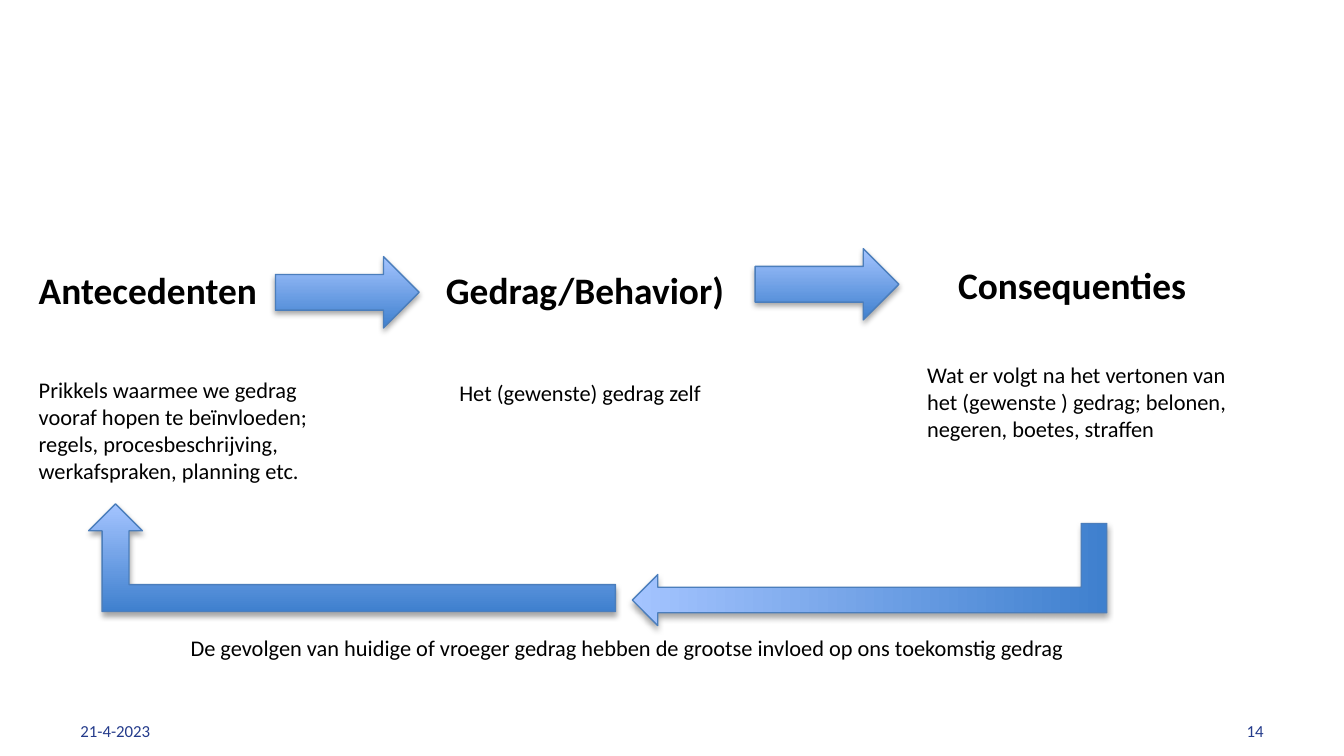
from lxml import etree
from pptx import Presentation
from pptx.dml.color import RGBColor
from pptx.enum import shapes, text
from pptx.oxml import ns
from pptx.util import Pt

HEADING = dict(size=Pt(20), bold=True)
BODY = dict(size=Pt(12))
FOOTER = dict(size=Pt(9))
BLACK, NAVY = "000000", "243B8B"
GRADIENT, OUTLINE = ("3F80CE", "A4C4FF"), "4B7EBC"

TEXTS = [
    ("Antecedenten", (13.7, 139.7, 163.4, 31.7), HEADING),
    ("Gedrag/Behavior)", (231.8, 139.7, 167, 31.7), HEADING),
    ("Consequenties", (506.2, 136.8, 141.8, 31.7), HEADING),
    ("Prikkels waarmee we gedrag vooraf hopen te beïnvloeden; regels, "
     "procesbeschrijving, werkafspraken, planning etc.",
     (13.7, 198, 175.7, 65.5), BODY),
    ("Het (gewenste) gedrag zelf", (239, 199.4, 162, 21.6), BODY),
    ("Wat er volgt na het vertonen van het (gewenste ) gedrag; belonen, "
     "negeren, boetes, straffen", (489.6, 190.1, 175.7, 51.1), BODY),
    ("De gevolgen van huidige of vroeger gedrag hebben de grootse invloed "
     "op ons toekomstig gedrag", (95, 336.2, 488.2, 21.6), BODY),
]
FOOTERS = [
    ("14", (516.2, 375.1, 167.8, 21.6), text.PP_ALIGN.RIGHT, 3.6),
    ("21-4-2023", (36, 375.1, 167.8, 21.6), text.PP_ALIGN.LEFT, 0),
]
KIND = shapes.MSO_SHAPE
ARROWS = [
    (KIND.RIGHT_ARROW, (147.6, 137.5, 77, 38.2), 0, False),
    (KIND.RIGHT_ARROW, (404.6, 133.2, 77, 38.2), 0, False),
    (KIND.BENT_UP_ARROW, (47.5, 270, 282.2, 57.6), 0, True),
    (KIND.BENT_UP_ARROW, (438.5, 180.7, 54.7, 254.2), 270, True),
]


def color(value):
    return RGBColor.from_string(value)


def apply(target, **values):
    for name, value in values.items():
        setattr(target, name, value)


def add_text(page, words, place, style, ink=BLACK, align=text.PP_ALIGN.LEFT, **frame):
    box = page.shapes.add_textbox(*map(Pt, place)).text_frame
    apply(box, word_wrap=True, **frame)
    para = box.paragraphs[0]
    para.alignment = align
    span = para.add_run()
    span.text = words
    apply(span.font, name="Calibri", **style)
    span.font.color.rgb = color(ink)


def add_shadow(shape):
    shape.shadow.inherit = False
    effects = shape._element.spPr.find(ns.qn("a:effectLst"))
    shadow = etree.SubElement(effects, ns.qn("a:outerShdw"), blurRad="40000",
                              dist="23000", dir="5400000", rotWithShape="0")
    tint = etree.SubElement(shadow, ns.qn("a:srgbClr"), val=BLACK)
    etree.SubElement(tint, ns.qn("a:alpha"), val="35000")


def add_arrow(page, kind, place, rotation, flipped):
    arrow = page.shapes.add_shape(kind, *map(Pt, place))
    arrow.rotation = rotation
    if flipped:
        arrow._element.spPr.xfrm.set("flipH", "1")
    arrow.fill.gradient()
    arrow.fill.gradient_angle = 90
    for stop, value, position in zip(arrow.fill.gradient_stops, GRADIENT, (0, 1)):
        stop.color.rgb = color(value)
        stop.position = position
    arrow.line.color.rgb = color(OUTLINE)
    arrow.line.width = Pt(0.75)
    add_shadow(arrow)


def main():
    deck = Presentation()
    apply(deck, slide_width=Pt(720), slide_height=Pt(405))
    page = deck.slides.add_slide(deck.slide_layouts[6])
    for words, place, align, top in FOOTERS:
        add_text(page, words, place, FOOTER, NAVY, align, margin_top=Pt(top),
                 margin_bottom=0, vertical_anchor=text.MSO_ANCHOR.BOTTOM)
    for words, place, style in TEXTS:
        add_text(page, words, place, style,
                 auto_size=text.MSO_AUTO_SIZE.SHAPE_TO_FIT_TEXT)
    for arrow in ARROWS:
        add_arrow(page, *arrow)
    deck.save("out.pptx")


if __name__ == "__main__":
    main()
